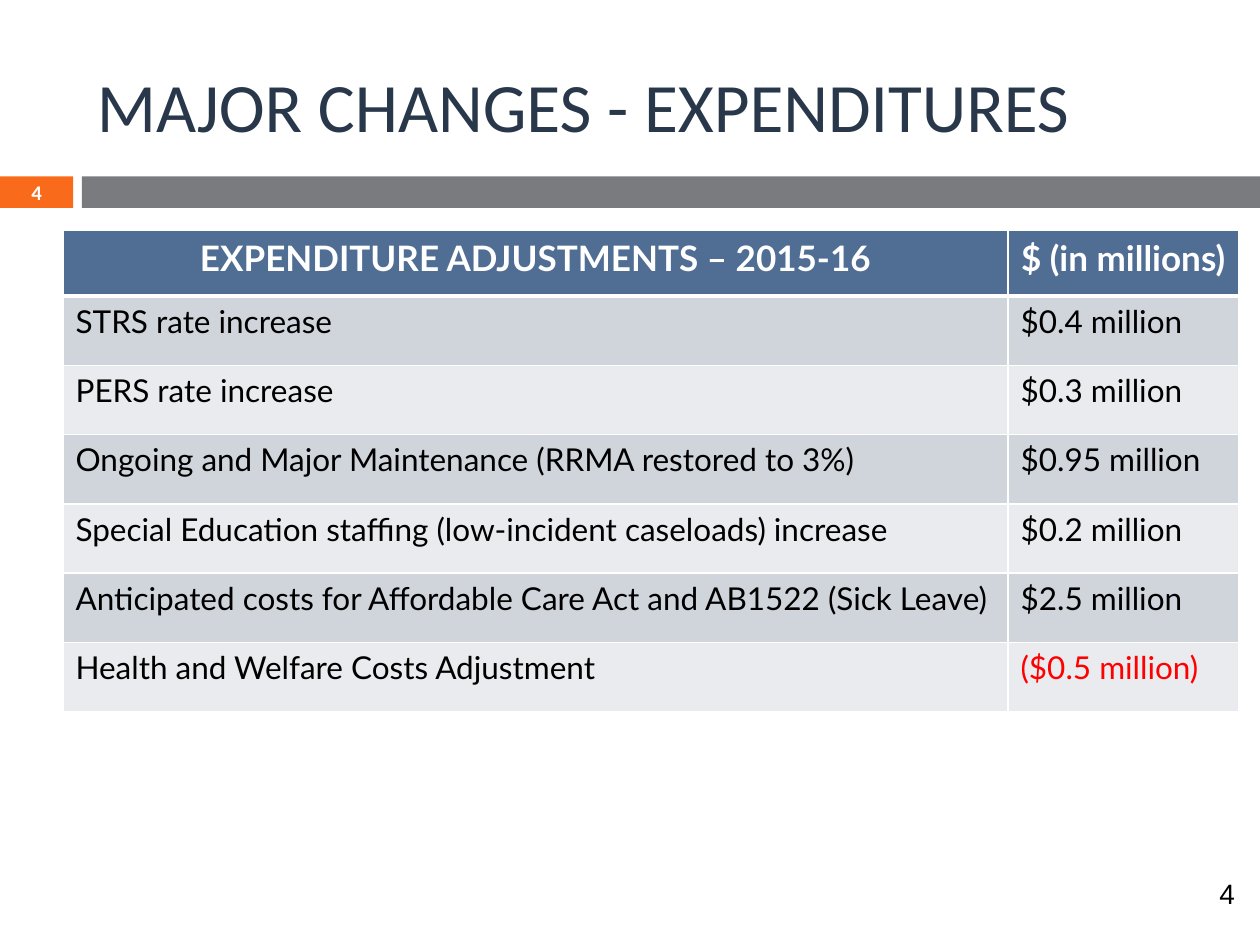
from lxml import etree
from pptx import Presentation
from pptx.dml.color import RGBColor
from pptx.enum.shapes import MSO_SHAPE
from pptx.enum.text import MSO_ANCHOR, MSO_AUTO_SIZE, PP_ALIGN
from pptx.oxml.ns import qn
from pptx.util import Inches, Pt

WHITE = RGBColor(0xFF, 0xFF, 0xFF)
BLACK = RGBColor(0x00, 0x00, 0x00)
RED = RGBColor(0xFF, 0x00, 0x00)
NAVY = RGBColor(0x28, 0x37, 0x4A)
ORANGE = RGBColor(0xF9, 0x6A, 0x1B)
GRAY = RGBColor(0x79, 0x7B, 0x7E)
HEADER_BLUE = RGBColor(0x50, 0x6E, 0x94)
BAND_DARK = RGBColor(0xD0, 0xD5, 0xDC)
BAND_LIGHT = RGBColor(0xE9, 0xEB, 0xEE)

PAGE_NUMBER = "4"
HEADER = ("EXPENDITURE ADJUSTMENTS – 2015-16", "$ (in millions)")
ADJUSTMENTS = [
    ("STRS rate increase", "$0.4 million"),
    ("PERS rate increase", "$0.3 million"),
    ("Ongoing and Major Maintenance (RRMA restored to 3%)", "$0.95 million"),
    ("Special Education staffing (low-incident caseloads) increase", "$0.2 million"),
    ("Anticipated costs for Affordable Care Act and AB1522 (Sick Leave)", "$2.5 million"),
    ("Health and Welfare Costs Adjustment", "($0.5 million)"),
]


def write_text(text_frame, text, *, font, size, color, bold=False, align=PP_ALIGN.LEFT):
    paragraph = text_frame.paragraphs[0]
    paragraph.alignment = align
    run = paragraph.add_run()
    run.text = text
    run.font.name = font
    run.font.size = Pt(size)
    run.font.bold = bold
    run.font.color.rgb = color


def add_text_box(slide, box, text, anchor=MSO_ANCHOR.TOP, **text_format):
    text_frame = slide.shapes.add_textbox(*map(Inches, box)).text_frame
    text_frame.word_wrap = True
    text_frame.vertical_anchor = anchor
    write_text(text_frame, text, **text_format)
    return text_frame


def add_bar(slide, box, color):
    shape = slide.shapes.add_shape(MSO_SHAPE.RECTANGLE, *map(Inches, box))
    shape.shadow.inherit = False
    shape.fill.solid()
    shape.fill.fore_color.rgb = color
    shape.line.fill.background()


def set_borders(cell, bottom_width):
    properties = cell._tc.get_or_add_tcPr()
    widths = {"a:lnL": 1, "a:lnR": 1, "a:lnT": 1, "a:lnB": bottom_width}
    for position, (tag, width) in enumerate(widths.items()):
        line = etree.Element(qn(tag), w=str(int(Pt(width))))
        fill = etree.SubElement(line, qn("a:solidFill"))
        etree.SubElement(fill, qn("a:srgbClr"), val=str(WHITE))
        properties.insert(position, line)


def fill_cell(cell, text, background, bottom_width=1, **text_format):
    cell.fill.solid()
    cell.fill.fore_color.rgb = background
    set_borders(cell, bottom_width)
    write_text(cell.text_frame, text, font="Lato", **text_format)


def add_title(slide, box):
    text_frame = add_text_box(slide, box, "MAJOR CHANGES - EXPENDITURES",
                              anchor=MSO_ANCHOR.MIDDLE, font="Calibri", size=39.6, color=NAVY)
    text_frame.margin_top = Inches(0.13)


def add_divider(slide, box):
    left, top, width, height = box
    badge_width, bar_offset = 0.58, 0.65
    add_bar(slide, (left, top, badge_width, height), ORANGE)
    add_bar(slide, (left + bar_offset, top, width - bar_offset, height), GRAY)
    # Page number on the orange badge
    add_text_box(slide, (left, top - 0.01, badge_width, height + 0.02), PAGE_NUMBER,
                 anchor=MSO_ANCHOR.MIDDLE, font="Calibri", size=11.9, color=WHITE,
                 bold=True, align=PP_ALIGN.CENTER)


def add_adjustments_table(slide, box):
    left, top, width, height = box
    amount_width, header_height = 1.83, 0.52
    row_height = (height - header_height) / len(ADJUSTMENTS)
    table = slide.shapes.add_table(len(ADJUSTMENTS) + 1, len(HEADER), *map(Inches, box)).table
    table.columns[0].width = Inches(width - amount_width)
    table.columns[1].width = Inches(amount_width)

    # Header row
    table.rows[0].height = Inches(header_height)
    for column, text in enumerate(HEADER):
        fill_cell(table.cell(0, column), text, HEADER_BLUE, bottom_width=3,
                  size=20, color=WHITE, bold=True, align=PP_ALIGN.CENTER)

    # Banded rows, with negative amounts in red
    for row, values in enumerate(ADJUSTMENTS, start=1):
        table.rows[row].height = Inches(row_height)
        band = BAND_DARK if row % 2 else BAND_LIGHT
        for column, text in enumerate(values):
            color = RED if text.startswith("(") else BLACK
            fill_cell(table.cell(row, column), text, band, size=18, color=color)


def add_footer(slide, box):
    text_frame = add_text_box(slide, box, PAGE_NUMBER, font="Arial", size=16, color=BLACK)
    text_frame.auto_size = MSO_AUTO_SIZE.SHAPE_TO_FIT_TEXT


def main():
    presentation = Presentation()
    presentation.slide_width = Inches(10)
    presentation.slide_height = Inches(7.5)
    slide = presentation.slides.add_slide(presentation.slide_layouts[6])
    add_divider(slide, (0, 1.4, 10, 0.25))
    add_adjustments_table(slide, (0.5, 1.83, 9.33, 3.82))
    add_title(slide, (0.67, 0.25, 8.92, 1.08))
    add_footer(slide, (9.58, 6.91, 0.42, 0.37))
    presentation.save("out.pptx")


if __name__ == "__main__":
    main()
